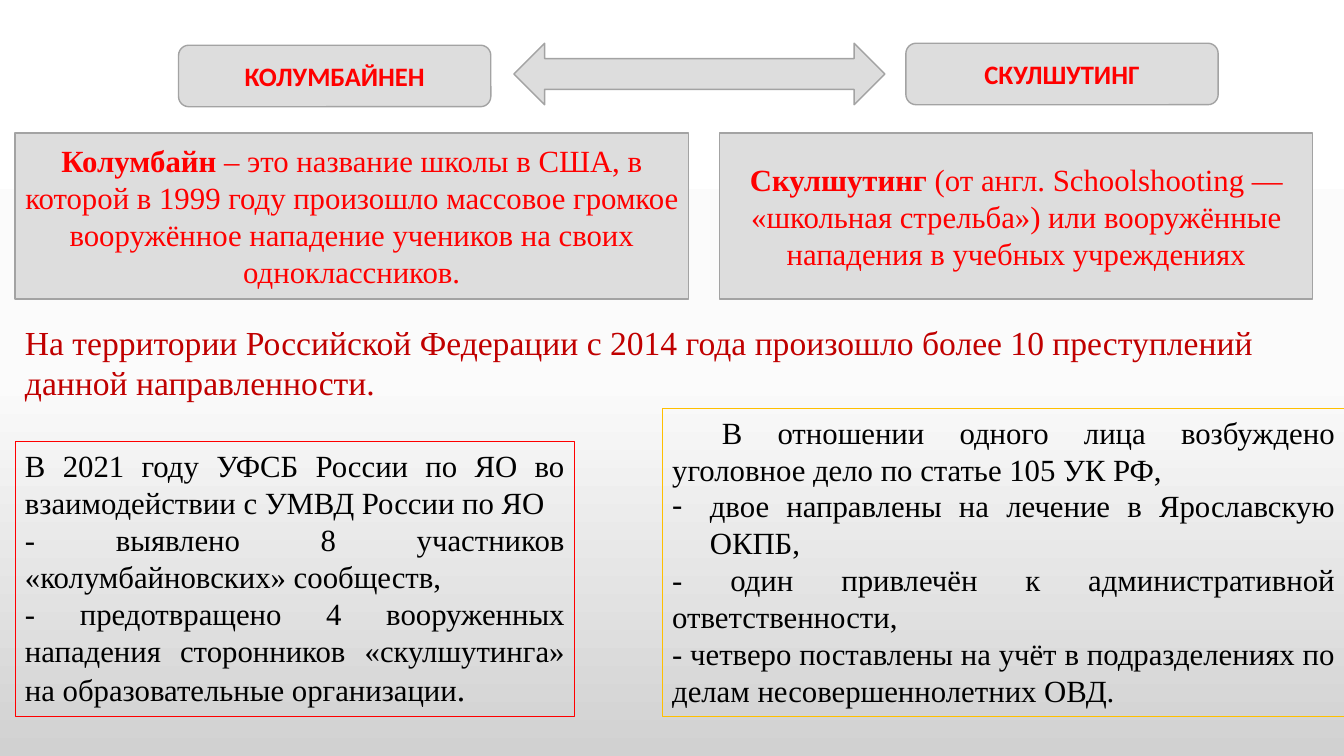
from copy import deepcopy

from lxml.etree import SubElement
from pptx import Presentation
from pptx.dml.color import RGBColor
from pptx.enum.shapes import MSO_SHAPE
from pptx.enum.text import MSO_ANCHOR, PP_ALIGN
from pptx.oxml.ns import qn
from pptx.util import Cm, Pt

WHITE = RGBColor(0xFF, 0xFF, 0xFF)
NEAR_WHITE = RGBColor(0xFB, 0xFB, 0xFB)
SILVER = RGBColor(0xD1, 0xD1, 0xD1)
PANEL = RGBColor(0xDD, 0xDD, 0xDD)
PANEL_EDGE = RGBColor(0xA3, 0xA3, 0xA3)
RED = RGBColor(0xFF, 0x00, 0x00)
DARK_RED = RGBColor(0xC0, 0x00, 0x00)
AMBER = RGBColor(0xFF, 0xC0, 0x00)
BLACK = RGBColor(0x00, 0x00, 0x00)

SERIF = "Times New Roman"
SANS = "Calibri"
MARGIN = 0.38


class SlideBuilder:
    body_size = 22

    def __init__(self, slide):
        self.slide = slide

    def background(self, *stops):
        fill = self.slide.background.fill
        fill.gradient()
        fill.gradient_angle = 270
        stop_list = next(self.slide.element.iter(qn("a:gsLst")))
        stop_list.insert(1, deepcopy(stop_list[0]))
        for stop, (position, color) in zip(fill.gradient_stops, stops):
            stop.position = position
            stop.color.rgb = color

    def style(self, run, color, font=SERIF, size=body_size, bold=False):
        run.font.name = font
        run.font.size = Pt(size)
        run.font.bold = bold
        run.font.color.rgb = color

    def shape(self, kind, box, edge=PANEL_EDGE, width=1, fill=PANEL):
        shape = self.slide.shapes.add_shape(kind, *map(Cm, box))
        shape.shadow.inherit = False
        if fill is None:
            shape.fill.background()
        else:
            shape.fill.solid()
            shape.fill.fore_color.rgb = fill
        shape.line.color.rgb = edge
        shape.line.width = Pt(width)
        return shape

    def heading(self, text, box):
        frame = self.shape(MSO_SHAPE.ROUNDED_RECTANGLE, box).text_frame
        frame.text = text
        frame.paragraphs[0].alignment = PP_ALIGN.CENTER
        self.style(frame.paragraphs[0].runs[0], RED, SANS, 19, True)

    def definition(self, term, meaning, box):
        frame = self.shape(MSO_SHAPE.RECTANGLE, box).text_frame
        frame.vertical_anchor = MSO_ANCHOR.MIDDLE
        frame.text = term
        paragraph = frame.paragraphs[0]
        paragraph.alignment = PP_ALIGN.CENTER
        paragraph.add_run().text = meaning
        for run, bold in zip(paragraph.runs, (True, False)):
            self.style(run, RED, bold=bold)

    def statement(self, text, box):
        frame = self.slide.shapes.add_textbox(*map(Cm, box)).text_frame
        frame.word_wrap = True
        frame.text = text
        self.style(frame.paragraphs[0].runs[0], DARK_RED, size=24)

    def facts(self, lines, box, edge):
        frame = self.shape(MSO_SHAPE.RECTANGLE, box, edge, 0.75, None).text_frame
        frame.vertical_anchor = MSO_ANCHOR.TOP
        frame.text = "\n".join(lines)
        for paragraph in frame.paragraphs:
            paragraph.alignment = PP_ALIGN.JUSTIFY
            self.style(paragraph.runs[0], BLACK)
        return frame.paragraphs

    def indent(self, paragraph, left, first, bullet=None):
        properties = paragraph._p.get_or_add_pPr()
        properties.set("marL", str(Cm(left)))
        properties.set("indent", str(Cm(first)))
        if bullet:
            SubElement(properties, qn("a:buFont"), typeface=SERIF)
            SubElement(properties, qn("a:buChar"), char=bullet)


def main():
    presentation = Presentation()
    presentation.slide_width = Cm(33.87)
    presentation.slide_height = Cm(19.05)
    builder = SlideBuilder(presentation.slides.add_slide(presentation.slide_layouts[6]))
    builder.background((0, WHITE), (0.5, NEAR_WHITE), (1, SILVER))

    builder.statement(
        "На территории Российской Федерации с 2014 года произошло более 10 "
        "преступлений данной направленности.",
        (MARGIN, 7.98, 32.66, 2.31),
    )

    prevention = builder.facts(
        [
            "В 2021 году УФСБ России по ЯО во взаимодействии с УМВД России по ЯО",
            "- выявлено 8 участников «колумбайновских» сообществ,",
            "- предотвращено 4 вооруженных нападения сторонников «скулшутинга» "
            "на образовательные организации",
        ],
        (MARGIN, 11.13, 14.1, 6.93),
        RED,
    )
    full_stop = prevention[-1].add_run()
    full_stop.text = "."
    builder.style(full_stop, BLACK, size=24)

    measures = builder.facts(
        [
            "В отношении одного лица возбуждено уголовное дело по статье 105 УК РФ,",
            "двое направлены на лечение в Ярославскую ОКПБ,",
            "- один привлечён к административной ответственности,",
            "- четверо поставлены на учёт в подразделениях по делам "
            "несовершеннолетних ОВД.",
        ],
        (16.69, 10.29, 17.2, 7.77),
        AMBER,
    )
    builder.indent(measures[0], 0, 1.25)
    builder.indent(measures[1], 0.95, -0.95, "-")

    builder.definition(
        "Скулшутинг",
        " (от англ. Schoolshooting — «школьная стрельба») или вооружённые "
        "нападения в учебных учреждениях",
        (18.14, 3.35, 14.94, 4.19),
    )
    builder.definition(
        "Колумбайн",
        " – это название школы в США, в которой в 1999 году произошло массовое "
        "громкое вооружённое нападение учеников на своих одноклассников.",
        (MARGIN, 3.35, 16.97, 4.19),
    )
    builder.heading("КОЛУМБАЙНЕН", (4.5, 1.14, 7.87, 1.55))
    builder.heading("СКУЛШУТИНГ", (22.83, 1.09, 7.87, 1.55))
    builder.shape(MSO_SHAPE.LEFT_RIGHT_ARROW, (12.95, 1.09, 9.35, 1.55))

    presentation.save("out.pptx")


if __name__ == "__main__":
    main()
